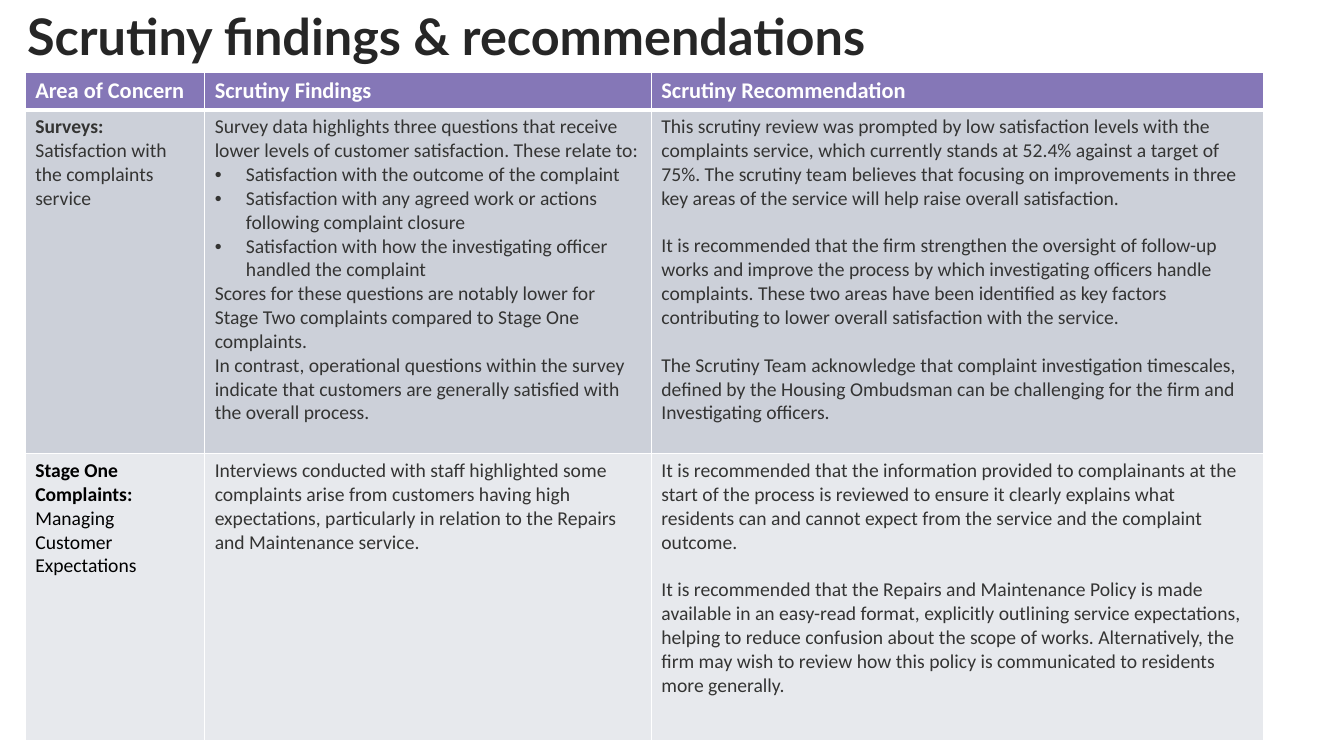
"""Build the scrutiny findings and recommendations slide."""
from lxml import etree
from pptx import Presentation, util as u
from pptx.dml.color import RGBColor
from pptx.oxml.ns import qn

COLORS = dict(title="262626", head="8577B7", white="FFFFFF", body="343433",
              black="000000", band1="CCD0D9", band2="E7E9ED")
COLS = (1.78, 4.43, 6.07)
ROWS = (0.37, 3.41, 2.85)
GAP = 17

HEADERS = ("Area of Concern", "Scrutiny Findings", "Scrutiny Recommendation")
SURVEY_FINDINGS = (
    "Survey data highlights three questions that receive lower levels of customer satisfaction. These relate to:",
    "• Satisfaction with the outcome of the complaint",
    "• Satisfaction with any agreed work or actions following complaint closure",
    "• Satisfaction with how the investigating officer handled the complaint",
    "Scores for these questions are notably lower for Stage Two complaints compared to Stage One complaints.",
    "In contrast, operational questions within the survey indicate that customers are generally satisfied with the overall process.",
)
SURVEY_ADVICE = (
    "This scrutiny review was prompted by low satisfaction levels with the complaints service, which currently stands at 52.4% against a target of 75%. The scrutiny team believes that focusing on improvements in three key areas of the service will help raise overall satisfaction.",
    "It is recommended that the firm strengthen the oversight of follow-up works and improve the process by which investigating officers handle complaints. These two areas have been identified as key factors contributing to lower overall satisfaction with the service.",
    "The Scrutiny Team acknowledge that complaint investigation timescales, defined by the Housing Ombudsman can be challenging for the firm and Investigating officers.",
)
STAGE_ONE_FINDINGS = (
    "Interviews conducted with staff highlighted some complaints arise from customers having high expectations, particularly in relation to the Repairs and Maintenance service.",
)
STAGE_ONE_ADVICE = (
    "It is recommended that the information provided to complainants at the start of the process is reviewed to ensure it clearly explains what residents can and cannot expect from the service and the complaint outcome.",
    "It is recommended that the Repairs and Maintenance Policy is made available in an easy-read format, explicitly outlining service expectations, helping to reduce confusion about the scope of works. Alternatively, the firm may wish to review how this policy is communicated to residents more generally.",
)


def rgb(name):
    """Return the named colour."""
    return RGBColor.from_string(COLORS[name])


def add_run(p, content, size=14, color="body", bold=False, font="Calibri"):
    """Append formatted text to a paragraph."""
    r = p.add_run()
    r.text = content
    r.font.size, r.font.bold, r.font.name = u.Pt(size), bold, font
    r.font.color.rgb = rgb(color)


def next_paragraph(tf):
    """Return the first paragraph if unused, otherwise a new one."""
    return tf.add_paragraph() if tf.paragraphs[0].runs else tf.paragraphs[0]


def add_bullet(p):
    """Give a paragraph a hanging bullet."""
    pPr = p._p.get_or_add_pPr()
    pPr.set("marL", str(u.Inches(0.31)))
    pPr.set("indent", str(-u.Inches(0.31)))
    etree.SubElement(pPr, qn("a:buFont"), typeface="Arial")
    etree.SubElement(pPr, qn("a:buChar"), char="•")


def write_paragraphs(tf, lines, gap=0, **fmt):
    """Write lines as paragraphs, bulleting those that start with a bullet."""
    for i, line in enumerate(lines):
        p = next_paragraph(tf)
        if i and gap:
            p.space_before = u.Pt(gap)
        if line.startswith("• "):
            add_bullet(p)
        add_run(p, line.removeprefix("• "), **fmt)


def style_cell(cell, fill, bottom=1):
    """Fill a cell and draw its white borders."""
    tcPr = cell._tc.get_or_add_tcPr()
    for side, width in zip("LRTB", (1, 1, 1, bottom)):
        ln = etree.SubElement(tcPr, qn("a:ln" + side), w=str(u.Pt(width)))
        solid = etree.SubElement(ln, qn("a:solidFill"))
        etree.SubElement(solid, qn("a:srgbClr"), val=COLORS["white"])
    cell.fill.solid()
    cell.fill.fore_color.rgb = rgb(fill)


def add_title(s, content):
    """Add the slide title."""
    sp = s.shapes.add_textbox(u.Inches(0.17), 0, u.Inches(11.33), u.Inches(0.71))
    sp.text_frame.word_wrap = True
    add_run(sp.text_frame.paragraphs[0], content, size=36, color="title",
            bold=True, font="Lato")


def add_grid(s):
    """Add the table with its sizes, fills and borders."""
    frame = s.shapes.add_table(len(ROWS), len(COLS), u.Inches(0.25), u.Inches(0.72),
                               u.Inches(sum(COLS)), u.Inches(sum(ROWS)))
    table = frame.table
    for col, width in zip(table.columns, COLS):
        col.width = u.Inches(width)
    for i, (row, height) in enumerate(zip(table.rows, ROWS)):
        row.height = u.Inches(height)
        for cell in row.cells:
            style_cell(cell, ("head", "band1", "band2")[i], 1 if i else 3)
    return table


def main():
    """Build and save the slide."""
    prs = Presentation()
    prs.slide_width, prs.slide_height = u.Inches(13.33), u.Inches(7.5)
    s = prs.slides.add_slide(prs.slide_layouts[6])
    table = add_grid(s)
    for i, header in enumerate(HEADERS):
        write_paragraphs(table.cell(0, i).text_frame, [header], size=16,
                         color="white", bold=True)

    p = table.cell(1, 0).text_frame.paragraphs[0]
    add_run(p, "Surveys: ", bold=True)
    add_run(p, "Satisfaction with the complaints service")
    write_paragraphs(table.cell(1, 1).text_frame, SURVEY_FINDINGS)
    write_paragraphs(table.cell(1, 2).text_frame, SURVEY_ADVICE, gap=GAP)

    tf = table.cell(2, 0).text_frame
    write_paragraphs(tf, ["Stage One Complaints:"], color="black", bold=True)
    write_paragraphs(tf, ["Managing Customer Expectations"], color="black")
    write_paragraphs(table.cell(2, 1).text_frame, STAGE_ONE_FINDINGS)
    write_paragraphs(table.cell(2, 2).text_frame, STAGE_ONE_ADVICE, gap=GAP)

    add_title(s, "Scrutiny findings & recommendations")
    prs.save("out.pptx")


if __name__ == "__main__":
    main()
